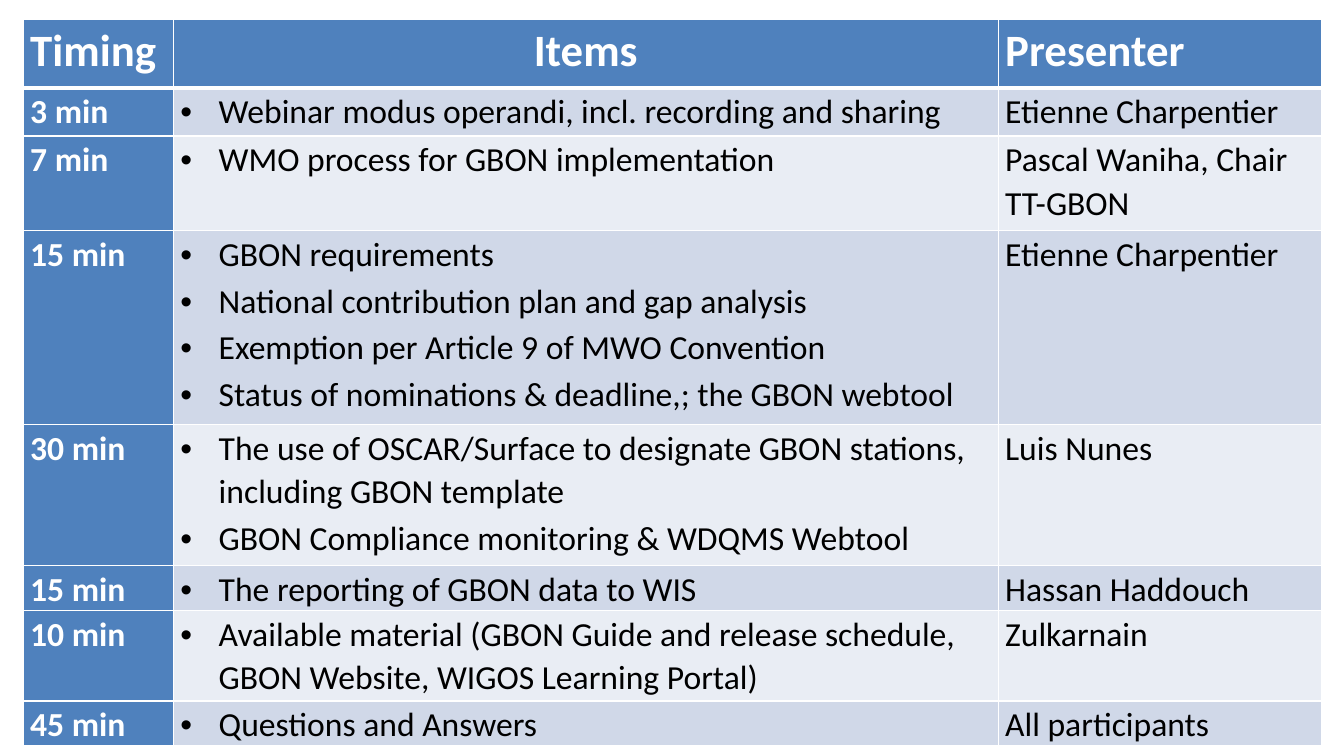
"""Build the webinar programme slide: a timed agenda table with presenters."""
from dataclasses import dataclass

from lxml.etree import SubElement
from pptx import Presentation
from pptx.dml.color import RGBColor
from pptx.enum.text import PP_ALIGN
from pptx.oxml.ns import qn
from pptx.table import _Cell
from pptx.text.text import _Paragraph
from pptx.util import Inches, Pt

FONT = "Calibri"
WHITE, BLACK, BLUE = "FFFFFF", "000000", "4F81BD"
BANDS = ("D0D8E8", "E9EDF4")
COLUMN_WIDTHS = (1.49, 8.18, 3.21)
HEADER_HEIGHT = 0.68
HEADINGS = ("Timing", "Items", "Presenter")


@dataclass(frozen=True)
class Session:
    timing: str
    items: tuple[str, ...]
    presenter: str
    height: float


@dataclass(frozen=True)
class CellStyle:
    fill: str
    color: str = BLACK
    size: int = 24
    bold: bool = False
    centred: bool = False
    bulleted: bool = False
    top: int = 1
    bottom: int = 1


SESSIONS = (
    Session("3 min", ("Webinar modus operandi, incl. recording and sharing",),
            "Etienne Charpentier", 0.48),
    Session("7 min", ("WMO process for GBON implementation",),
            "Pascal Waniha, Chair TT-GBON", 0.94),
    Session("15 min", ("GBON requirements",
                       "National contribution plan and gap analysis",
                       "Exemption per Article 9 of MWO Convention",
                       "Status of nominations & deadline,; the GBON webtool"),
            "Etienne Charpentier", 1.92),
    Session("30 min", ("The use of OSCAR/Surface to designate GBON stations, "
                       "including GBON template",
                       "GBON Compliance monitoring & WDQMS Webtool"),
            "Luis Nunes", 1.4),
    Session("15 min", ("The reporting of GBON data to WIS",), "Hassan Haddouch", 0.44),
    Session("10 min", ("Available material (GBON Guide and release schedule, "
                       "GBON Website, WIGOS Learning Portal)",),
            "Zulkarnain", 0.9),
    Session("45 min", ("Questions and Answers",), "All participants", 0.44),
)


def rgb(color: str) -> RGBColor:
    return RGBColor.from_string(color)


def add_borders(cell: _Cell, style: CellStyle) -> None:
    properties = cell._tc.get_or_add_tcPr()
    for side, width in (("L", 1), ("R", 1), ("T", style.top), ("B", style.bottom)):
        line = SubElement(properties, qn(f"a:ln{side}"), w=str(Pt(width)))
        SubElement(SubElement(line, qn("a:solidFill")), qn("a:srgbClr"), val=WHITE)


def add_bullet(paragraph: _Paragraph) -> None:
    properties = paragraph._p.get_or_add_pPr()
    indent = Inches(0.38)
    properties.set("marL", str(indent))
    properties.set("indent", str(-indent))
    SubElement(properties, qn("a:buFont"), typeface="Arial")
    SubElement(properties, qn("a:buChar"), char="•")


def fill_cell(cell: _Cell, texts: tuple[str, ...], style: CellStyle) -> None:
    add_borders(cell, style)
    cell.fill.solid()
    cell.fill.fore_color.rgb = rgb(style.fill)
    cell.margin_left = cell.margin_right = Inches(0.07)
    cell.margin_top, cell.margin_bottom = Inches(0.01), 0
    frame = cell.text_frame
    for index, text in enumerate(texts):
        paragraph = frame.add_paragraph() if index else frame.paragraphs[0]
        if style.bulleted:
            add_bullet(paragraph)
        paragraph.alignment = PP_ALIGN.CENTER if style.centred else PP_ALIGN.LEFT
        paragraph.line_spacing = 1.07
        paragraph.space_before = Pt(1 if index else 0)
        paragraph.space_after = Pt(1)
        run = paragraph.add_run()
        run.text = text
        run.font.name = FONT
        run.font.size = Pt(style.size)
        run.font.bold = style.bold
        run.font.color.rgb = rgb(style.color)


def main() -> None:
    presentation = Presentation()
    presentation.slide_width, presentation.slide_height = Inches(13.33), Inches(7.5)
    slide = presentation.slides.add_slide(presentation.slide_layouts.get_by_name("Blank"))
    heights = (HEADER_HEIGHT, *(session.height for session in SESSIONS))
    programme = slide.shapes.add_table(
        len(heights), len(COLUMN_WIDTHS), Inches(0.23), Inches(0.19),
        Inches(sum(COLUMN_WIDTHS)), Inches(sum(heights))).table
    for column, width in zip(programme.columns, COLUMN_WIDTHS):
        column.width = Inches(width)
    for row, height in zip(programme.rows, heights):
        row.height = Inches(height)

    for column, heading in enumerate(HEADINGS):
        fill_cell(programme.cell(0, column), (heading,),
                  CellStyle(BLUE, WHITE, 32, bold=True, centred=heading == "Items", bottom=3))
    for row, session in enumerate(SESSIONS, start=1):
        band = BANDS[(row - 1) % 2]
        top = 3 if row == 1 else 1
        fill_cell(programme.cell(row, 0), (session.timing,),
                  CellStyle(BLUE, WHITE, bold=True, top=top))
        fill_cell(programme.cell(row, 1), session.items,
                  CellStyle(band, bulleted=True, top=top))
        fill_cell(programme.cell(row, 2), (session.presenter,), CellStyle(band, top=top))
    presentation.save("out.pptx")


if __name__ == "__main__":
    main()
